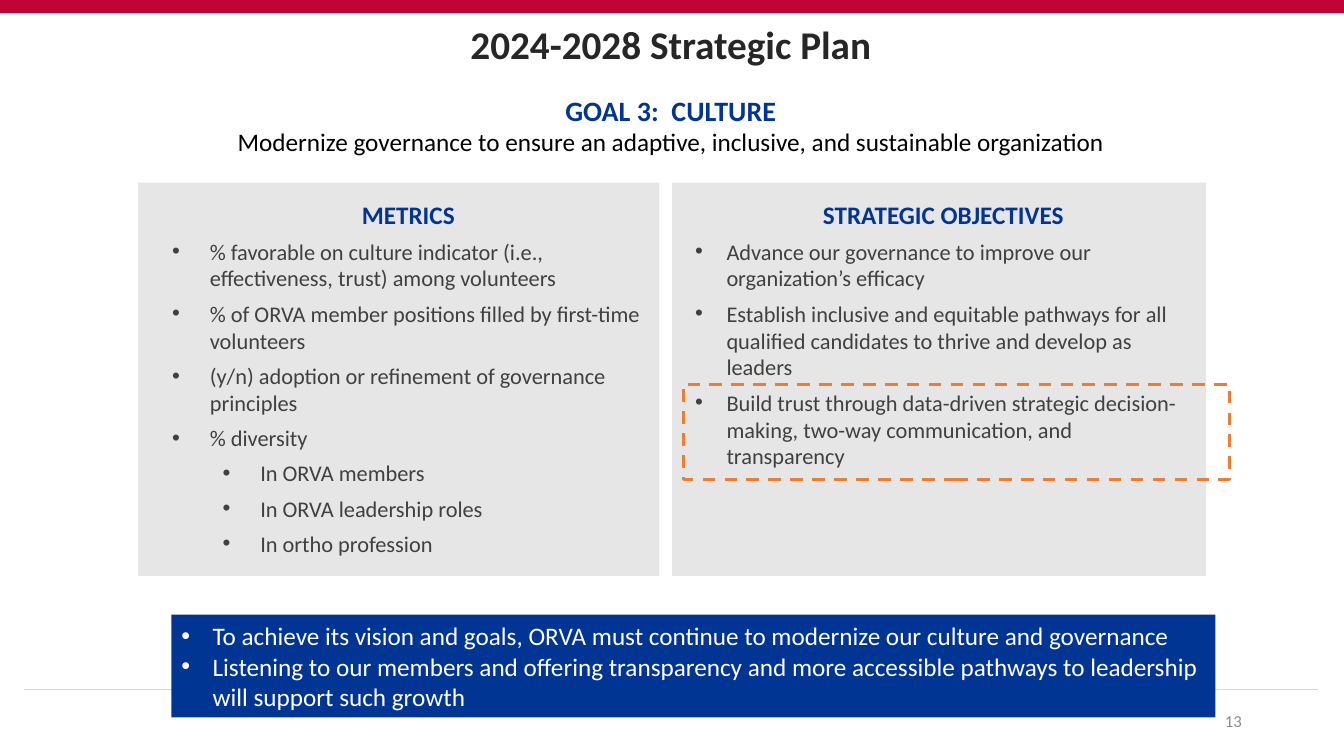
from lxml import etree
from pptx import Presentation
from pptx.dml.color import RGBColor
from pptx.enum.dml import MSO_LINE
from pptx.enum.shapes import MSO_CONNECTOR, MSO_SHAPE
from pptx.enum.text import MSO_ANCHOR, PP_ALIGN
from pptx.oxml.ns import qn
from pptx.util import Cm, Pt

LEFT, CENTER, RIGHT = PP_ALIGN.LEFT, PP_ALIGN.CENTER, PP_ALIGN.RIGHT
TOP, MIDDLE = MSO_ANCHOR.TOP, MSO_ANCHOR.MIDDLE
RECTANGLE = MSO_SHAPE.RECTANGLE
STRAIGHT = MSO_CONNECTOR.STRAIGHT
DASH = MSO_LINE.DASH

FONT = "Calibri"
COLORS = {
    "crimson": "C00433", "rule": "D9D9D9", "panel": "E7E6E6",
    "navy": "003594", "title": "262626", "body": "404040",
    "black": "000000", "white": "FFFFFF", "number": "8C8C8C",
    "highlight": "ED7D31",
}
LEVEL_STEP = 1.27

METRICS = [
    ("% favorable on culture indicator (i.e., effectiveness, trust) among volunteers", 0),
    ("% of ORVA member positions filled by first-time volunteers", 0),
    ("(y/n) adoption or refinement of governance principles", 0),
    ("% diversity", 0),
    ("In ORVA members", 1),
    ("In ORVA leadership roles", 1),
    ("In ortho profession", 1),
]
OBJECTIVES = [
    ("Advance our governance to improve our organization’s efficacy", 0),
    ("Establish inclusive and equitable pathways for all qualified candidates "
     "to thrive and develop as leaders", 0),
    ("Build trust through data-driven strategic decision-making, two-way "
     "communication, and transparency", 0),
]
TAKEAWAYS = [
    "To achieve its vision and goals, ORVA must continue to modernize our culture and governance",
    "Listening to our members and offering transparency and more accessible "
    "pathways to leadership will support such growth",
]


def rgb(name):
    """Return the named colour."""
    return RGBColor.from_string(COLORS[name])


def lengths(box):
    """Turn a box in centimetres into lengths."""
    return [Cm(value) for value in box]


def add_rule(slide, start, end, y, color, weight):
    """Draw a horizontal rule without a shadow."""
    rule = slide.shapes.add_connector(STRAIGHT, Cm(start), Cm(y), Cm(end), Cm(y))
    rule.line.color.rgb = rgb(color)
    rule.line.width = Pt(weight)
    properties = rule.element.find(qn("p:spPr"))
    etree.SubElement(properties, qn("a:effectLst"))


def add_rectangle(slide, box, fill=None):
    """Draw a rectangle without outline or shadow."""
    rectangle = slide.shapes.add_shape(RECTANGLE, *lengths(box))
    rectangle.shadow.inherit = False
    rectangle.line.fill.background()
    if fill:
        rectangle.fill.solid()
        rectangle.fill.fore_color.rgb = rgb(fill)
    else:
        rectangle.fill.background()
    return rectangle


def add_text_area(slide, box, anchor=TOP):
    """Add a wrapping text box and return its frame."""
    frame = slide.shapes.add_textbox(*lengths(box)).text_frame
    frame.word_wrap = True
    frame.vertical_anchor = anchor
    return frame


def write(frame, text, size, color, bold=False, align=CENTER, after=0, hang=0, level=0):
    """Write the next paragraph, bulleted when it has a hanging indent."""
    first = frame.paragraphs[0]
    paragraph = frame.add_paragraph() if first.runs else first
    paragraph.alignment = align
    paragraph.level = level
    paragraph.space_after = Pt(after)
    if hang:
        properties = paragraph._p.get_or_add_pPr()
        properties.set("marL", str(Cm(hang + level * LEVEL_STEP)))
        properties.set("indent", str(-Cm(hang)))
        etree.SubElement(properties, qn("a:buFont"), typeface="Arial")
        etree.SubElement(properties, qn("a:buChar"), char="•")
    run = paragraph.add_run()
    run.text = text
    run.font.name = FONT
    run.font.size = Pt(size)
    run.font.bold = bold
    run.font.color.rgb = rgb(color)


def add_frame(slide, width):
    """Draw the top band, the footer rule and the slide number."""
    add_rule(slide, 0, width, 0.16, "crimson", 9)
    add_rule(slide, 0.61, width - 0.65, 17.37, "rule", 0.5)
    number = add_text_area(slide, (23.93, 17.65, 7.62, 1.02), MIDDLE)
    write(number, "13", 12, "number", align=RIGHT)


def add_heading(slide, box):
    """Place the slide title with the goal and its statement below."""
    left, top, width, height = box
    title = add_text_area(slide, (left, top, width, 1.45))
    write(title, "2024-2028 Strategic Plan", 28, "title", True)
    goal = add_text_area(slide, (left, top + 1.83, width, height - 1.83), MIDDLE)
    write(goal, "GOAL 3:  CULTURE", 20, "navy", True)
    write(goal, "Modernize governance to ensure an adaptive, inclusive, "
          "and sustainable organization", 18, "black")


def add_panel(slide, box, heading, items, inset, hang):
    """Draw a grey panel with a heading and bullets."""
    left, top, width, height = box
    add_rectangle(slide, box, "panel")
    frame = add_text_area(
        slide, (left + inset, top + 0.29, width - inset - 0.12, height - 0.5))
    write(frame, heading, 18, "navy", True, after=6)
    for text, level in items:
        write(frame, text, 16, "body", align=LEFT, after=6, hang=hang, level=level)


def add_highlight(slide, box):
    """Outline the stressed objective with dashes."""
    outline = add_rectangle(slide, box).line
    outline.color.rgb = rgb("highlight")
    outline.width = Pt(2.25)
    outline.dash_style = DASH


def add_banner(slide, box):
    """Draw the navy banner with the takeaways."""
    frame = add_rectangle(slide, box, "navy").text_frame
    frame.word_wrap = True
    frame.vertical_anchor = MIDDLE
    for takeaway in TAKEAWAYS:
        write(frame, takeaway, 18, "white", align=LEFT, hang=0.79)


def main():
    """Build and save the strategic plan slide."""
    deck = Presentation()
    width = 33.87
    deck.slide_width, deck.slide_height = Cm(width), Cm(19.05)
    slide = deck.slides.add_slide(deck.slide_layouts[6])
    add_frame(slide, width)
    add_heading(slide, (5.13, 0.38, 23.55, 3.71))
    add_panel(slide, (3.48, 4.6, 13.13, 9.91), "METRICS", METRICS, 0.61, 0.95)
    add_panel(slide, (16.94, 4.6, 13.46, 9.91), "STRATEGIC OBJECTIVES", OBJECTIVES, 0.33, 0.79)
    add_banner(slide, (4.32, 15.49, 26.31, 2.59))
    add_highlight(slide, (17.22, 9.68, 13.77, 2.41))
    deck.save("out.pptx")


if __name__ == "__main__":
    main()
